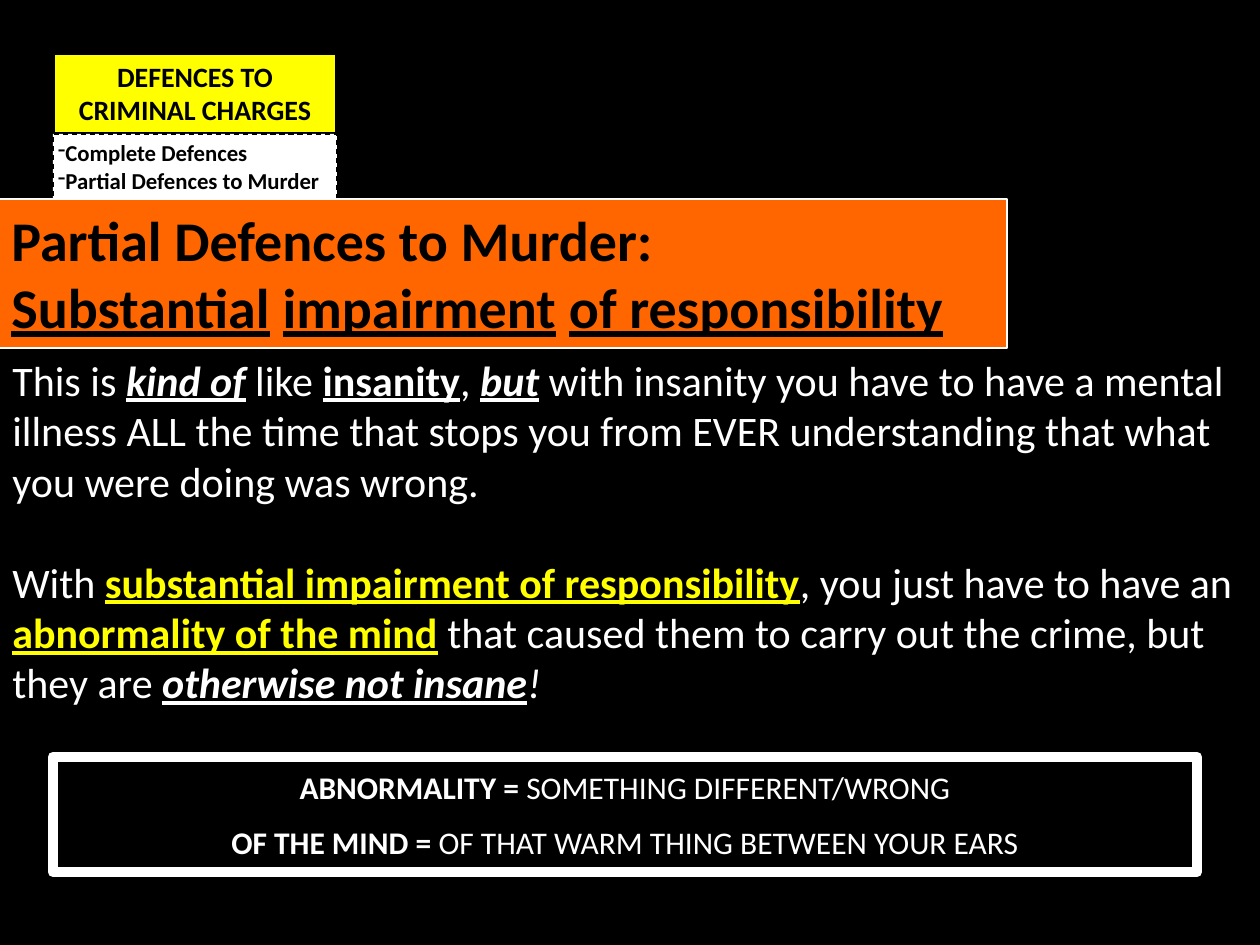
from dataclasses import dataclass

from lxml import etree
from pptx import Presentation
from pptx.dml.color import RGBColor
from pptx.enum.dml import MSO_LINE
from pptx.enum.shapes import MSO_SHAPE
from pptx.enum.text import MSO_ANCHOR, MSO_AUTO_SIZE, PP_ALIGN
from pptx.oxml.ns import qn
from pptx.util import Emu, Inches, Pt

RECTANGLE = MSO_SHAPE.RECTANGLE
DASH = MSO_LINE.DASH
TOP, MIDDLE = MSO_ANCHOR.TOP, MSO_ANCHOR.MIDDLE
GROW, FIXED = MSO_AUTO_SIZE.SHAPE_TO_FIT_TEXT, MSO_AUTO_SIZE.NONE
LEFT, CENTER = PP_ALIGN.LEFT, PP_ALIGN.CENTER

PIXELS_PER_INCH = 126


@dataclass(frozen=True)
class Theme:
    font: str = "Calibri"
    black: str = "000000"
    white: str = "FFFFFF"
    yellow: str = "FFFF00"
    orange: str = "FF6600"
    title_size: int = 32
    body_size: int = 24
    definition_size: int = 18
    header_size: int = 16
    list_size: int = 13


THEME = Theme()
BOLD = {"bold": True}
UNDERLINED = {"bold": True, "underline": True}
EMPHASIS = {"bold": True, "italic": True, "underline": True}
ITALIC = {"italic": True}
KEY_TERM = {**UNDERLINED, "color": THEME.yellow}


def px(length):
    return Emu(round(length * Inches(1) / PIXELS_PER_INCH))


def set_attributes(target, values):
    for name, value in values.items():
        setattr(target, name, value)


class SlideBuilder:
    def __init__(self, slide, theme):
        self.slide = slide
        self.theme = theme

    def background(self, color):
        fill = self.slide.background.fill
        fill.solid()
        fill.fore_color.rgb = RGBColor.from_string(color)

    def box(self, bounds, line_color, line_width, fill=None, dash=None):
        shape = self.slide.shapes.add_shape(RECTANGLE, *map(px, bounds))
        shape.shadow.inherit = False
        if fill:
            shape.fill.solid()
            shape.fill.fore_color.rgb = RGBColor.from_string(fill)
        else:
            shape.fill.background()
        shape.line.color.rgb = RGBColor.from_string(line_color)
        set_attributes(shape.line, {"width": Pt(line_width), "dash_style": dash})
        return shape

    def text_box(self, bounds):
        return self.slide.shapes.add_textbox(*map(px, bounds))

    def add_text(self, shape, paragraphs, size, color, frame=None, layout=None, bullet=None):
        """Fill a shape with paragraphs, each a list of (text, format) runs."""
        text_frame = shape.text_frame
        set_attributes(text_frame, {"word_wrap": True, "vertical_anchor": TOP,
                                    "auto_size": GROW, **(frame or {})})
        for index, runs in enumerate(paragraphs):
            paragraph = text_frame.paragraphs[0] if index == 0 else text_frame.add_paragraph()
            set_attributes(paragraph, {"alignment": LEFT, **(layout or {})})
            if bullet:
                self.add_bullet(paragraph, bullet)
            for text, style in runs:
                self.add_run(paragraph, text, {"color": color, **style}, size)

    def add_run(self, paragraph, text, style, size):
        run = paragraph.add_run()
        run.text = text
        values = {"name": self.theme.font, "size": Pt(size), **style}
        run.font.color.rgb = RGBColor.from_string(values.pop("color"))
        set_attributes(run.font, values)

    def add_bullet(self, paragraph, character):
        properties = paragraph._p.get_or_add_pPr()
        etree.SubElement(properties, qn("a:buFontTx"))
        etree.SubElement(properties, qn("a:buChar")).set("char", character)


def margins(horizontal, vertical):
    return {"margin_left": px(horizontal), "margin_right": px(horizontal),
            "margin_top": px(vertical), "margin_bottom": px(vertical)}


def main():
    presentation = Presentation()
    set_attributes(presentation, {"slide_width": px(1260), "slide_height": px(945)})
    slide = presentation.slides.add_slide(presentation.slide_layouts[6])
    builder = SlideBuilder(slide, THEME)
    builder.background(THEME.black)

    header = builder.box((53, 53, 284, 81), THEME.black, 2, THEME.yellow)
    builder.add_text(header, [[("DEFENCES TO CRIMINAL CHARGES", BOLD)]],
                     THEME.header_size, THEME.black, layout={"alignment": CENTER})

    topics = builder.box((53, 134, 284, 65), THEME.black, 0.75, THEME.white, DASH)
    builder.add_text(topics,
                     [[(topic, BOLD)] for topic in ("Complete Defences", "Partial Defences to Murder")],
                     THEME.list_size, THEME.black, frame=margins(5, 5), bullet="-")

    explanation = builder.text_box((0, 348, 1260, 369))
    builder.add_text(explanation, [
        [("This is ", {}), ("kind of", EMPHASIS), (" like ", {}), ("insanity", UNDERLINED),
         (", ", {}), ("but", EMPHASIS),
         (" with insanity you have to have a mental illness ALL the time that stops you "
          "from EVER understanding that what you were doing was wrong.", {})],
        [("With ", {}), ("substantial impairment of responsibility", KEY_TERM),
         (", you just have to have an ", {}), ("abnormality of the mind", KEY_TERM),
         (" that caused them to carry out the crime, but they are ", {}),
         ("otherwise not insane", EMPHASIS), ("!", ITALIC)],
    ], THEME.body_size, THEME.white)
    explanation.text_frame.paragraphs[1].space_before = Pt(29)

    definitions = builder.box((53, 757, 1144, 115), THEME.white, 6)
    builder.add_text(definitions, [
        [("ABNORMALITY = ", BOLD), ("SOMETHING DIFFERENT/WRONG", {})],
        [("OF THE MIND = ", BOLD), ("OF THAT WARM THING BETWEEN YOUR EARS", {})],
    ], THEME.definition_size, THEME.white,
        frame={"vertical_anchor": MIDDLE, "auto_size": FIXED, **margins(19, 13)},
        layout={"alignment": CENTER, "space_after": Pt(10)})

    title = builder.box((-1, 199, 1008, 149), THEME.white, 0.75, THEME.orange)
    builder.add_text(title, [
        [("Partial Defences to Murder:", BOLD)],
        [("Substantial", UNDERLINED), (" ", BOLD), ("impairment", UNDERLINED), (" ", BOLD),
         ("of responsibility", UNDERLINED)],
    ], THEME.title_size, THEME.black)

    presentation.save("out.pptx")


if __name__ == "__main__":
    main()
